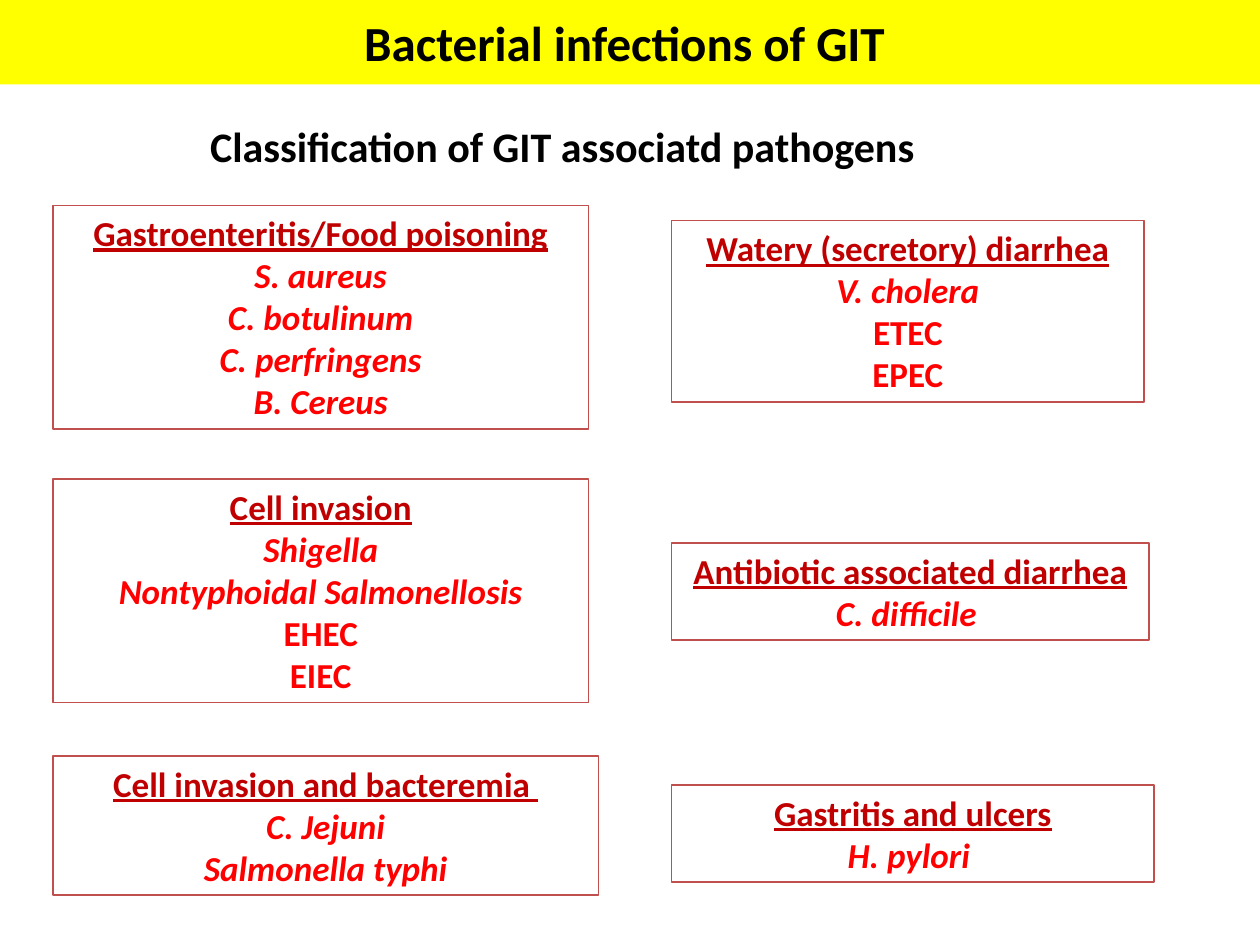
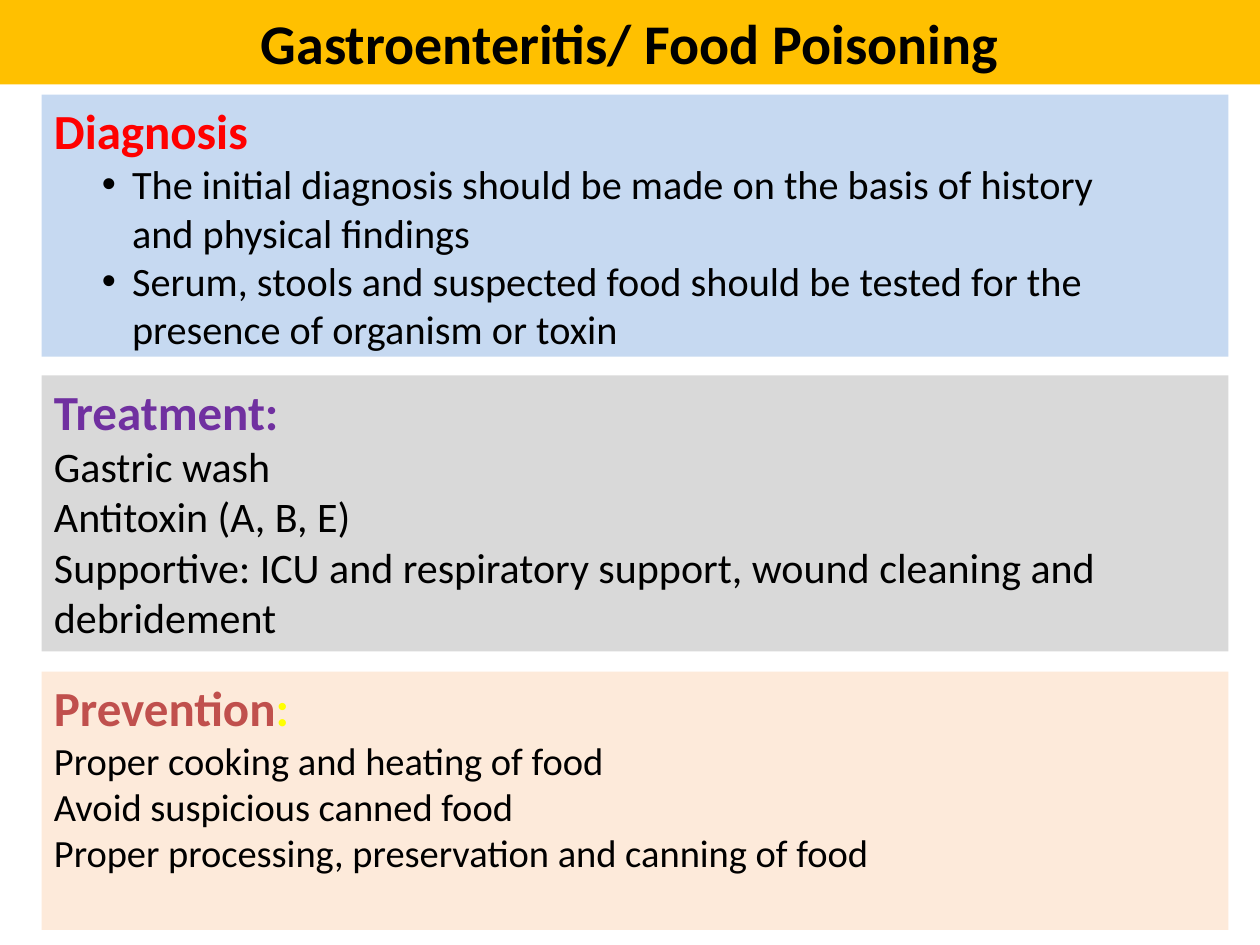
from lxml import etree
from pptx import Presentation
from pptx.dml.color import RGBColor
from pptx.enum.shapes import MSO_SHAPE
from pptx.enum.text import MSO_ANCHOR, MSO_AUTO_SIZE, PP_ALIGN
from pptx.oxml.ns import qn
from pptx.util import Inches, Pt

RECT = MSO_SHAPE.RECTANGLE
TOP, MIDDLE = MSO_ANCHOR.TOP, MSO_ANCHOR.MIDDLE
LEFT, CENTER = PP_ALIGN.LEFT, PP_ALIGN.CENTER
NO_AUTOFIT = MSO_AUTO_SIZE.NONE

FONT = "Calibri"
BLACK = RGBColor(0x00, 0x00, 0x00)
WHITE = RGBColor(0xFF, 0xFF, 0xFF)
YELLOW = RGBColor(0xFF, 0xFF, 0x00)
AMBER = RGBColor(0xFF, 0xC0, 0x00)
RED = RGBColor(0xFF, 0x00, 0x00)
DARK_RED = RGBColor(0xC0, 0x00, 0x00)
BRICK = RGBColor(0xC0, 0x50, 0x4D)
PURPLE = RGBColor(0x70, 0x30, 0xA0)
PALE_BLUE = RGBColor(0xC6, 0xD9, 0xF1)
PALE_GREY = RGBColor(0xD9, 0xD9, 0xD9)
PALE_ORANGE = RGBColor(0xFD, 0xEA, 0xDA)

LEFT_COLUMN, RIGHT_COLUMN = 0.42, 5.33
CARD_PADDING, CARD_LINE = 0.1, 0.335
PATHOGEN_CARDS = [
    (LEFT_COLUMN, 1.63, 4.25, "Gastroenteritis/Food poisoning",
     ["S. aureus", "C. botulinum", "C. perfringens", "B. Cereus"]),
    (LEFT_COLUMN, 3.8, 4.25, "Cell invasion",
     ["Shigella", "Nontyphoidal Salmonellosis", "EHEC", "EIEC"]),
    (LEFT_COLUMN, 6, 4.33, "Cell invasion and bacteremia ",
     ["C. Jejuni", "Salmonella typhi"]),
    (RIGHT_COLUMN, 1.75, 3.75, "Watery (secretory) diarrhea",
     ["V. cholera", "ETEC", "EPEC"]),
    (RIGHT_COLUMN, 4.31, 3.79, "Antibiotic associated diarrhea",
     ["C. difficile "]),
    (RIGHT_COLUMN, 6.23, 3.83, "Gastritis and ulcers", ["H. pylori "]),
]

DIAGNOSIS = [
    "The initial diagnosis should be made on the basis of history "
    "and physical findings",
    "Serum, stools and suspected food should be tested for the "
    "presence of organism or toxin",
]
TREATMENT = [
    "Gastric wash",
    "Antitoxin (A, B, E)",
    "Supportive: ICU and respiratory support, wound cleaning and debridement",
]
PREVENTION = [
    "Proper cooking and heating of food",
    "Avoid suspicious canned food",
    "Proper processing, preservation and canning of food",
]


def add_run(p, text, size, color, bold=False, italic=False, underline=False):
    """Add one formatted run to a paragraph."""
    r = p.add_run()
    r.text = text
    font = r.font
    font.name, font.size, font.color.rgb = FONT, Pt(size), color
    font.bold, font.italic, font.underline = bold, italic, underline


def add_paragraph(tf, align):
    """Return the empty first paragraph, or a new one, aligned."""
    first = tf.paragraphs[0]
    p = tf.add_paragraph() if first.runs else first
    p.alignment = align
    return p


def set_bullet(p, margin, hanging):
    """Give a paragraph a round bullet with a hanging indent."""
    pPr = p._p.get_or_add_pPr()
    pPr.set("marL", str(Inches(margin)))
    pPr.set("indent", str(-Inches(hanging)))
    etree.SubElement(pPr, qn("a:buFont")).set("typeface", "Arial")
    etree.SubElement(pPr, qn("a:buChar")).set("char", "•")


def add_slide(prs, title, size, fill):
    """Add a slide whose title is a coloured band across the top."""
    slide = prs.slides.add_slide(prs.slide_layouts.get_by_name("Title Only"))
    sp = slide.shapes.title
    sp.left, sp.top = Inches(0), Inches(0)
    sp.width, sp.height = prs.slide_width, Inches(0.67)
    sp.fill.solid()
    sp.fill.fore_color.rgb = fill
    tf = sp.text_frame
    tf.auto_size, tf.vertical_anchor = NO_AUTOFIT, MIDDLE
    add_run(add_paragraph(tf, CENTER), title, size, BLACK, bold=True)
    return slide


def add_box(slide, left, top, width, height, fill, line=None):
    """Add a filled rectangle and return its text frame."""
    sp = slide.shapes.add_shape(
        RECT, Inches(left), Inches(top), Inches(width), Inches(height))
    sp.shadow.inherit = False
    sp.fill.solid()
    sp.fill.fore_color.rgb = fill
    if line is None:
        sp.line.fill.background()
    else:
        sp.line.color.rgb = line
        sp.line.width = Pt(1)
    tf = sp.text_frame
    tf.word_wrap, tf.vertical_anchor = True, TOP
    return tf


def add_subtitle(slide, text):
    """Add the heading below the title band."""
    sp = slide.shapes.add_textbox(
        Inches(1.57), Inches(0.91), Inches(5.93), Inches(0.51))
    tf = sp.text_frame
    tf.word_wrap = False
    add_run(add_paragraph(tf, LEFT), text, 24, BLACK, bold=True)


def add_pathogen_card(slide, left, top, width, heading, pathogens):
    """Add an outlined card; species are italic, abbreviations upright."""
    height = CARD_PADDING + CARD_LINE * (1 + len(pathogens))
    tf = add_box(slide, left, top, width, height, WHITE, BRICK)
    add_run(add_paragraph(tf, CENTER), heading, 20, DARK_RED,
            bold=True, underline=True)
    for name in pathogens:
        add_run(add_paragraph(tf, CENTER), name, 20, RED,
                bold=True, italic=not name.isupper())


def add_section(slide, top, height, fill, heading, lines, size, bullets=False):
    """Add a full-width panel with heading runs and body lines."""
    tf = add_box(slide, 0.33, top, 9.42, height, fill)
    p = add_paragraph(tf, LEFT)
    for text, color in heading:
        add_run(p, text, 28, color, bold=True)
    for line in lines:
        p = add_paragraph(tf, LEFT)
        add_run(p, line, size, BLACK)
        if bullets:
            set_bullet(p, 0.62, 0.24)
    return tf


def main():
    """Build both slides and save the deck."""
    prs = Presentation()
    prs.slide_width, prs.slide_height = Inches(10), Inches(7.5)

    slide = add_slide(prs, "Bacterial infections of GIT ", 28, YELLOW)
    add_subtitle(slide, "Classification of GIT associatd pathogens")
    for card in PATHOGEN_CARDS:
        add_pathogen_card(slide, *card)

    slide = add_slide(prs, "Gastroenteritis/ Food Poisoning", 32, AMBER)
    tf = add_section(slide, 0.75, 2.08, PALE_BLUE, [("Diagnosis", RED)],
                     DIAGNOSIS, 23, bullets=True)
    tf.margin_right = Inches(0.7)
    add_section(slide, 2.98, 2.19, PALE_GREY, [("Treatment:", PURPLE)],
                TREATMENT, 24)
    add_section(slide, 5.33, 2.05, PALE_ORANGE,
                [("Prevention", BRICK), (":", YELLOW)], PREVENTION, 22)

    prs.save("out.pptx")


if __name__ == "__main__":
    main()
